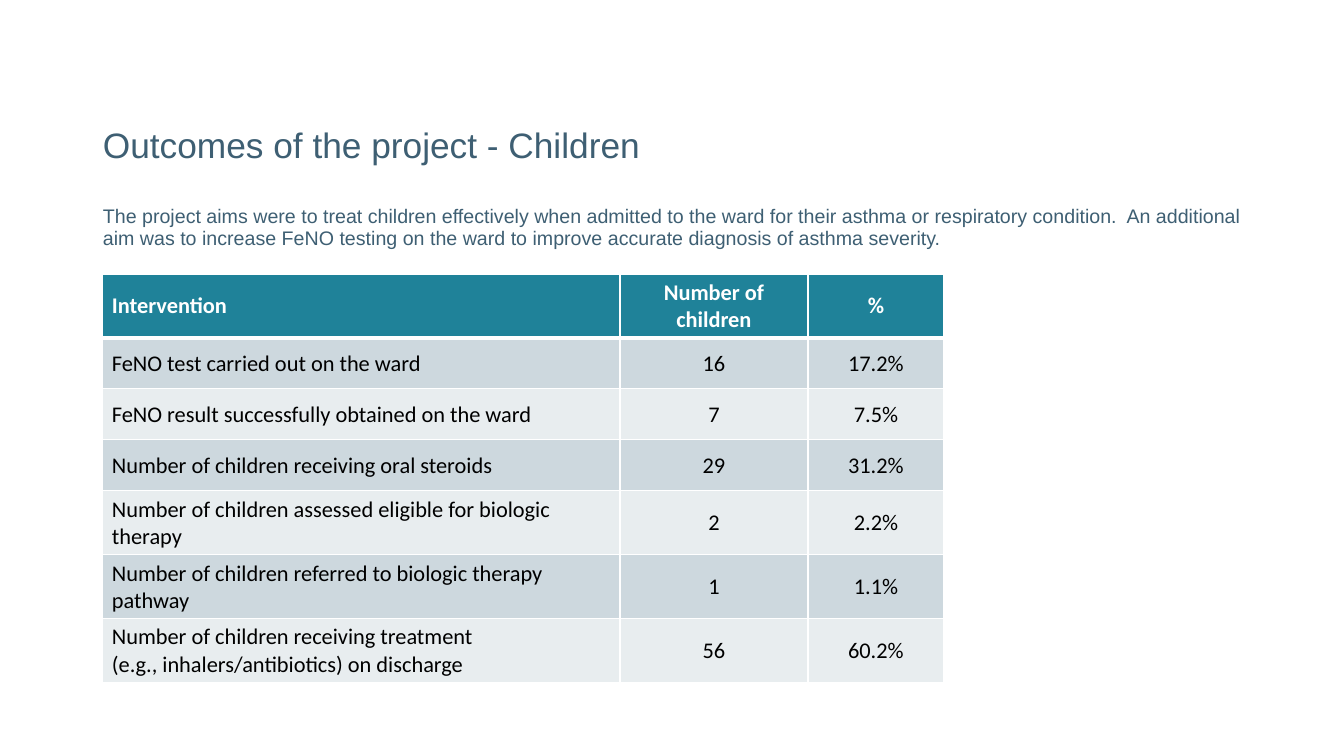
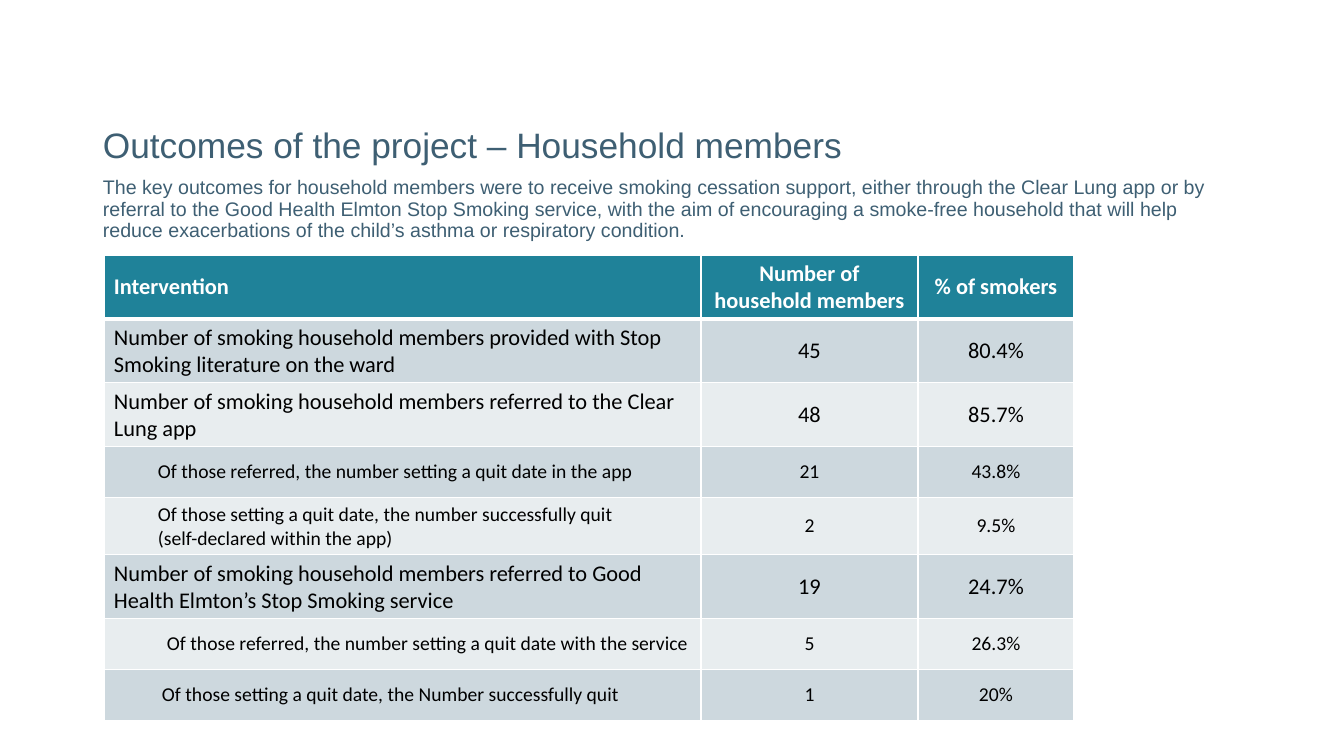
from lxml.etree import SubElement
from pptx import Presentation
from pptx.dml.color import RGBColor
from pptx.enum.text import MSO_ANCHOR, PP_ALIGN
from pptx.oxml.ns import qn
from pptx.util import Emu, Pt

SCALE = 12192000 / 1344  # EMU in one px
SLIDE_W, SLIDE_H = 1344, 756
TEXT_LEFT, TEXT_W = 93, 1159
TITLE_TOP, TITLE_H = 122, 50
HEADER_H, ROW_H = 47, 51
CELL_MARGIN = 10

HEADER_FILL = "1F8299"
BAND_FILLS = ("CDD8DE", "E8EDEF")
BORDER = "FFFFFF"
TITLE_FONT = {"name": "Arial", "size": Pt(25.2), "color": "3E5F73"}
INTRO_FONT = {"name": "Arial", "size": Pt(14), "color": "3E5F73"}
HEADER_FONT = {"name": "Calibri", "size": Pt(16), "bold": True, "color": "FFFFFF"}
ROW_FONT = {"name": "Calibri", "size": Pt(16), "bold": False, "color": "000000"}
SUB_FONT = {**ROW_FONT, "size": Pt(14)}

# Each row: indent in px (0 for a main row), intervention, number, percentage
SLIDES = [
    {
        "title": "Outcomes of the project - Children",
        "intro": "The project aims were to treat children effectively when admitted to the ward "
                 "for their asthma or respiratory condition.  An additional aim was to increase "
                 "FeNO testing on the ward to improve accurate diagnosis of asthma severity.",
        "intro_box": (202, 60),
        "table_at": (102, 274),
        "columns": (518, 188, 136),
        "header": ("Intervention", "Number of children", "%"),
        "rows": [
            (0, "FeNO test carried out on the ward", "16", "17.2%"),
            (0, "FeNO result successfully obtained on the ward", "7", "7.5%"),
            (0, "Number of children receiving oral steroids", "29", "31.2%"),
            (0, "Number of children assessed eligible for biologic therapy", "2", "2.2%"),
            (0, "Number of children referred to biologic therapy pathway", "1", "1.1%"),
            (0, "Number of children receiving treatment\n"
                "(e.g., inhalers/antibiotics) on discharge", "56", "60.2%"),
        ],
    },
    {
        "title": "Outcomes of the project – Household members",
        "intro": "The key outcomes for household members were to receive smoking cessation "
                 "support, either through the Clear Lung app or by referral to the Good Health "
                 "Elmton Stop Smoking service, with the aim of encouraging a smoke-free household "
                 "that will help reduce exacerbations of the child’s asthma or respiratory "
                 "condition.",
        "intro_box": (173, 80),
        "table_at": (104, 255),
        "columns": (597, 217, 156),
        "header": ("Intervention", "Number of household members", "% of smokers"),
        "rows": [
            (0, "Number of smoking household members provided with Stop Smoking literature "
                "on the ward", "45", "80.4%"),
            (0, "Number of smoking household members referred to the Clear Lung app",
             "48", "85.7%"),
            (44, "Of those referred, the number setting a quit date in the app", "21", "43.8%"),
            (44, "Of those setting a quit date, the number successfully quit\n"
                 "(self-declared within the app)", "2", "9.5%"),
            (0, "Number of smoking household members referred to Good Health Elmton’s "
                "Stop Smoking service", "19", "24.7%"),
            (53, "Of those referred, the number setting a quit date with the service",
             "5", "26.3%"),
            (48, "Of those setting a quit date, the Number successfully quit", "1", "20%"),
        ],
    },
]


def px(n):
    return Emu(round(n * SCALE))


def rgb(value):
    return RGBColor.from_string(value)


def write(tf, text, font, **para):
    """Fill a text frame, giving every paragraph the same format."""
    tf.text = text
    for p in tf.paragraphs:
        for name, value in para.items():
            setattr(p, name, value)
        for r in p.runs:
            for name, value in font.items():
                if name == "color":
                    r.font.color.rgb = rgb(value)
                else:
                    setattr(r.font, name, value)


def add_text(slide, top, height, text, font, anchor):
    box = slide.shapes.add_textbox(px(TEXT_LEFT), px(top), px(TEXT_W), px(height))
    tf = box.text_frame
    tf.word_wrap = True
    tf.vertical_anchor = anchor
    write(tf, text, font, line_spacing=0.9)


def set_borders(cell, top, bottom):
    """Draw the four cell borders; top and bottom are widths in points."""
    tc_pr = cell._tc.get_or_add_tcPr()
    for side, width in (("L", 1), ("R", 1), ("T", top), ("B", bottom)):
        ln = SubElement(tc_pr, qn(f"a:ln{side}"), w=str(Pt(width)))
        fill = SubElement(ln, qn("a:solidFill"))
        SubElement(fill, qn("a:srgbClr"), val=BORDER)


def add_outcome_table(slide, at, columns, header, rows):
    lines = [(0, *header), *rows]
    heights = [HEADER_H] + [ROW_H] * len(rows)
    frame = slide.shapes.add_table(len(lines), len(columns), *map(px, at),
                                   px(sum(columns)), px(sum(heights)))
    table = frame.table
    for column, width in zip(table.columns, columns):
        column.width = px(width)
    for i, (indent, *texts) in enumerate(lines):
        table.rows[i].height = px(heights[i])
        if i == 0:
            fill, font = HEADER_FILL, HEADER_FONT
        else:
            fill, font = BAND_FILLS[(i - 1) % 2], SUB_FONT if indent else ROW_FONT
        for j, text in enumerate(texts):
            cell = table.cell(i, j)
            set_borders(cell, top=3 if i == 1 else 1, bottom=3 if i == 0 else 1)
            cell.fill.solid()
            cell.fill.fore_color.rgb = rgb(fill)
            cell.vertical_anchor = MSO_ANCHOR.MIDDLE
            if j == 0:
                cell.margin_left = px(CELL_MARGIN + indent)
            write(cell.text_frame, text, font,
                  alignment=PP_ALIGN.CENTER if j else PP_ALIGN.LEFT)


def main():
    prs = Presentation()
    prs.slide_width, prs.slide_height = px(SLIDE_W), px(SLIDE_H)
    for content in SLIDES:
        s = prs.slides.add_slide(prs.slide_layouts[6])
        add_text(s, TITLE_TOP, TITLE_H, content["title"], TITLE_FONT, MSO_ANCHOR.MIDDLE)
        add_text(s, *content["intro_box"], content["intro"], INTRO_FONT, MSO_ANCHOR.TOP)
        add_outcome_table(s, content["table_at"], content["columns"],
                          content["header"], content["rows"])
    prs.save("out.pptx")


if __name__ == "__main__":
    main()
